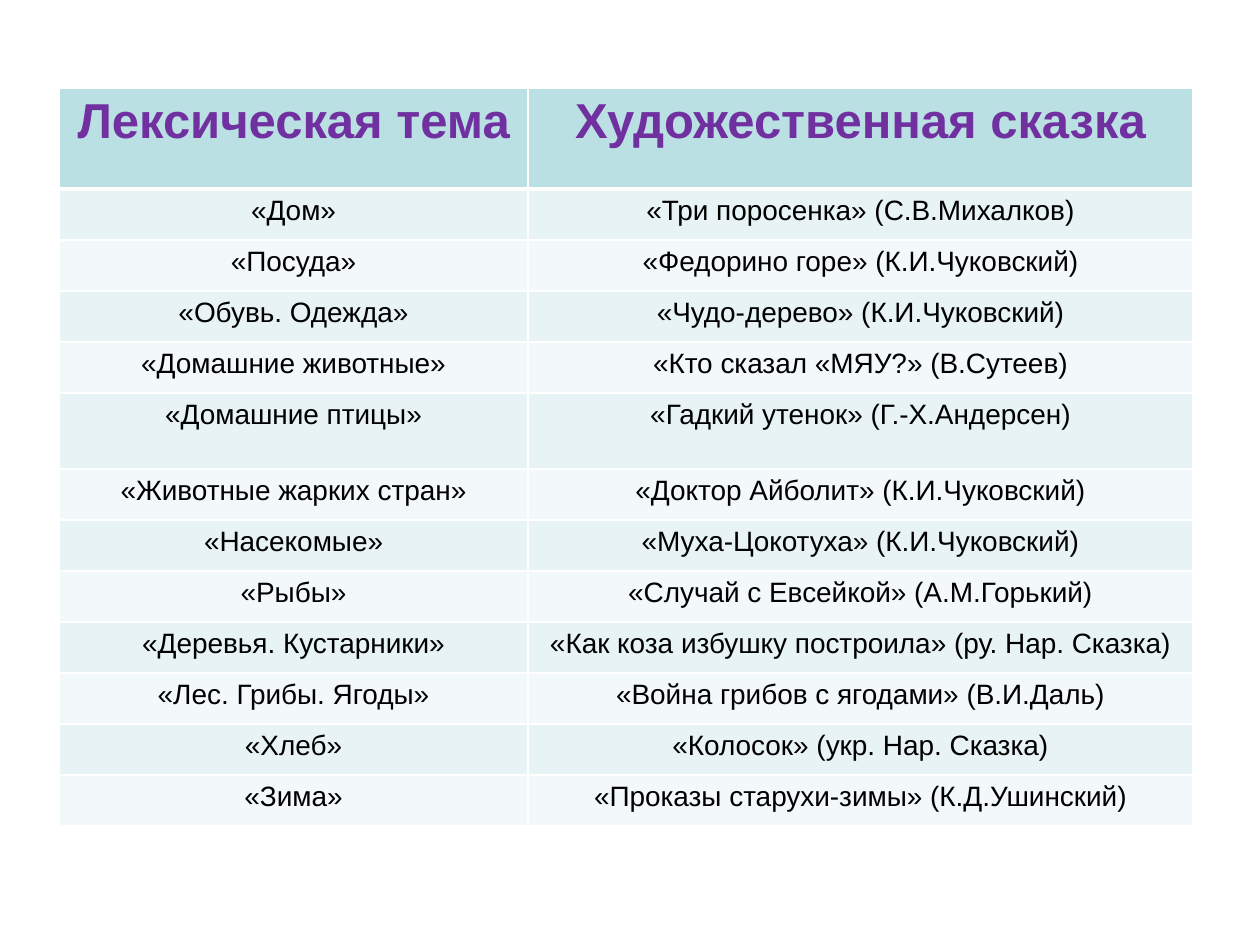
from dataclasses import dataclass

import lxml.etree
import pptx
import pptx.dml.color
import pptx.enum.text
import pptx.oxml.ns
import pptx.table
import pptx.util

Inches = pptx.util.Inches

TABLE_HEIGHT = 5.86
HEADER_HEIGHT = 0.8
TALL_HEIGHT = 0.6
COLUMN_WIDTHS = (3.72, 5.28)
HEADER_FILL = "BBE0E3"
BAND_FILLS = ("E7F3F4", "F3F9FA")
BORDER_COLOR = "FFFFFF"


@dataclass(frozen=True)
class ThemeRow:
    theme: str
    tale: str
    tall: bool = False


HEADER = ThemeRow("Лексическая тема", "Художественная сказка")
THEME_ROWS = [
    ThemeRow("«Дом»", "«Три поросенка» (С.В.Михалков)"),
    ThemeRow("«Посуда»", "«Федорино горе» (К.И.Чуковский)"),
    ThemeRow("«Обувь. Одежда»", "«Чудо-дерево» (К.И.Чуковский)"),
    ThemeRow("«Домашние животные»", "«Кто сказал «МЯУ?» (В.Сутеев)"),
    ThemeRow("«Домашние птицы»", "«Гадкий утенок» (Г.-Х.Андерсен)", tall=True),
    ThemeRow("«Животные жарких стран»", "«Доктор Айболит» (К.И.Чуковский)"),
    ThemeRow("«Насекомые»", "«Муха-Цокотуха» (К.И.Чуковский)"),
    ThemeRow("«Рыбы»", "«Случай с Евсейкой» (А.М.Горький)"),
    ThemeRow("«Деревья. Кустарники»", "«Как коза избушку построила» (ру. Нар. Сказка)"),
    ThemeRow("«Лес. Грибы. Ягоды»", "«Война грибов с ягодами» (В.И.Даль)"),
    ThemeRow("«Хлеб»", "«Колосок» (укр. Нар. Сказка)"),
    ThemeRow("«Зима»", "«Проказы старухи-зимы» (К.Д.Ушинский)"),
]


def color(value: str) -> pptx.dml.color.RGBColor:
    return pptx.dml.color.RGBColor.from_string(value)


def write_text(text_frame, text: str, *, size: int, fill: str, bold: bool = False) -> None:
    paragraph = text_frame.paragraphs[0]
    paragraph.alignment = pptx.enum.text.PP_ALIGN.CENTER
    run = paragraph.add_run()
    run.text = text
    run.font.name = "Arial"
    run.font.size = pptx.util.Pt(size)
    run.font.bold = bold
    run.font.color.rgb = color(fill)


def set_borders(cell: pptx.table._Cell, top: int = 1, bottom: int = 1) -> None:
    qualified = pptx.oxml.ns.qn
    properties = cell._tc.get_or_add_tcPr()
    for side, width in (("L", 1), ("R", 1), ("T", top), ("B", bottom)):
        line = lxml.etree.SubElement(
            properties, qualified(f"a:ln{side}"), w=str(pptx.util.Pt(width))
        )
        solid = lxml.etree.SubElement(line, qualified("a:solidFill"))
        lxml.etree.SubElement(solid, qualified("a:srgbClr"), val=BORDER_COLOR)


def draw_row(table: pptx.table.Table, index: int, row: ThemeRow) -> None:
    is_header = index == 0
    for column, text in enumerate((row.theme, row.tale)):
        cell = table.cell(index, column)
        set_borders(cell, top=3 if index == 1 else 1, bottom=3 if is_header else 1)
        cell.fill.solid()
        cell.fill.fore_color.rgb = color(
            HEADER_FILL if is_header else BAND_FILLS[(index - 1) % 2]
        )
        write_text(
            cell.text_frame,
            text,
            size=28 if is_header else 16,
            fill="7030A0" if is_header else "000000",
            bold=is_header,
        )


def main() -> None:
    presentation = pptx.Presentation()
    presentation.slide_width = Inches(10)
    presentation.slide_height = Inches(7.5)
    slide = presentation.slides.add_slide(presentation.slide_layouts[6])

    rows = [HEADER, *THEME_ROWS]
    table = slide.shapes.add_table(
        len(rows), len(COLUMN_WIDTHS),
        Inches(0.47), Inches(0.7), Inches(sum(COLUMN_WIDTHS)), Inches(TABLE_HEIGHT),
    ).table
    for column, width in zip(table.columns, COLUMN_WIDTHS):
        column.width = Inches(width)

    row_height = (TABLE_HEIGHT - HEADER_HEIGHT - TALL_HEIGHT) / (len(rows) - 2)
    for index, row in enumerate(rows):
        if index == 0:
            height = HEADER_HEIGHT
        else:
            height = TALL_HEIGHT if row.tall else row_height
        table.rows[index].height = Inches(height)
        draw_row(table, index, row)

    presentation.save("out.pptx")


if __name__ == "__main__":
    main()
